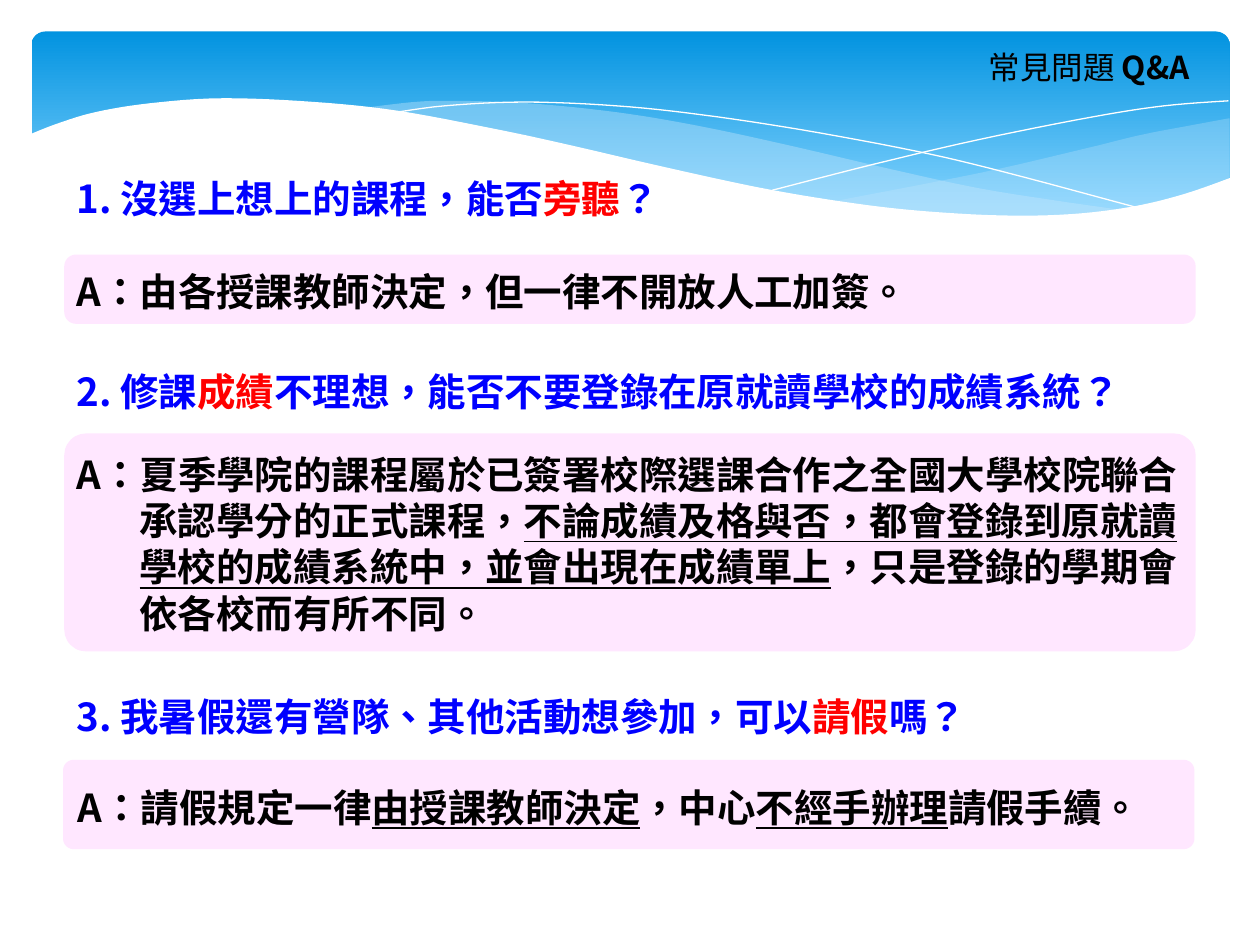
"""Build the course FAQ slide: a wave banner above three questions with answers."""
from dataclasses import dataclass
from typing import NamedTuple

from lxml.etree import SubElement
from pptx import Presentation
from pptx.dml.color import RGBColor
from pptx.enum.shapes import MSO_SHAPE as Preset
from pptx.enum.text import MSO_AUTO_SIZE as AutoSize, PP_ALIGN as Align
from pptx.oxml.ns import qn
from pptx.util import Inches, Pt

COLUMNS, ROWS = 100, 75
CELL = Inches(0.1)


@dataclass(frozen=True)
class Theme:
    font: str = "Noto Sans CJK SC"
    language: str = "zh-TW"
    body: float = 22
    heading: float = 18
    leading: float = 1.2
    ink: str = "000000"
    question: str = "0000FF"
    accent: str = "FF0000"
    panel: str = "FFE7FF"
    paper: str = "FFFFFF"
    sky_top: str = "0293E0"
    sky_bottom: str = "83D3FE"
    mist: str = "C6E7FC"


class Area(NamedTuple):
    column: float
    row: float
    columns: float
    rows: float


class Span(NamedTuple):
    text: str
    color: str
    bold: bool = True
    underline: bool = False


class Wave(NamedTuple):
    edges: list
    fill: str | None = None
    opacity: int = 100


class Entry(NamedTuple):
    question_row: float
    question: list
    panel: Area
    corner: float
    answer: Area
    reply: list


THEME = Theme()


def ask(text: str) -> Span:
    """Return a question span."""
    return Span(text, THEME.question)


def stress(text: str) -> Span:
    """Return a highlighted keyword span."""
    return Span(text, THEME.accent)


def say(text: str, underline: bool = False) -> Span:
    """Return an answer span."""
    return Span(text, THEME.ink, underline=underline)


WAVES = [
    Wave([[(97.5, 9.4), (94.8, 9.9), (90.6, 10.7), (86.1, 11.8), (77.9, 13.7), (66.1, 16)],
          [(66.1, 16), (71.9, 16.7), (76.9, 17.1), (81.4, 17.2), (86.3, 17),
           (89.7, 16.5), (93.5, 15.6), (97.6, 14.1)],
          [(97.6, 14.1), (97.6, 9.4)]], THEME.mist, 29),
    Wave([[(89.3, 16.7), (83.7, 15.9), (77.5, 14.9), (70.6, 13.4), (62.9, 11.6),
           (55.5, 10), (48.9, 8.9), (42, 8.2), (36.1, 8), (32.8, 8.1), (28.6, 8.6)],
          [(28.6, 8.6), (34.2, 9.4), (40.4, 10.6), (44.9, 11.6), (53, 13.5), (60.1, 15),
           (66.5, 16.1), (72.2, 16.8), (77.3, 17.2), (81.8, 17.3), (85.7, 17.1), (89.3, 16.7)]],
         THEME.mist, 40),
    Wave([[(30.9, 9), (35.3, 8.4), (41.6, 8.1), (48.9, 8.4), (55.6, 9.1), (63.6, 10.3),
           (72.7, 12), (79.5, 13.6), (90.7, 16.6)]]),
    Wave([[(61.3, 15.1), (69.5, 13), (77.6, 11.1), (86.6, 9.3), (92.4, 8.4), (97.5, 8)]]),
    Wave([[(2.3, 10.7), (4.6, 9.8), (7.6, 8.9), (11.9, 8.2), (17.7, 7.8), (25, 8.1),
           (31.6, 8.8), (39.1, 10.2), (44.7, 11.4), (52.9, 13.3), (60.3, 14.9), (66.8, 16),
           (72.6, 16.7), (79.3, 17.1), (85, 17), (89.9, 16.4), (94, 15.4), (97.7, 14.1)],
          [(97.7, 22.4), (2.3, 22.4)]], THEME.paper),
]

ENTRIES = [
    Entry(13.2, [ask("1. 沒選上想上的課程，能否"), stress("旁聽"), ask("？")],
          Area(5.1, 20.2, 89.8, 5.5), 0.17, Area(5.1, 20.6, 90.6, 4.7),
          [say("A：由各授課教師決定，但一律不開放人工加簽。")]),
    Entry(28.5, [ask("2. 修課"), stress("成績"),
                 ask("不理想，能否不要登錄在原就讀學校的成績系統？")],
          Area(5.1, 34.4, 89.8, 17.3), 0.1, Area(5.1, 35.1, 90.6, 15.8),
          [say("A：夏季學院的課程屬於已簽署校際選課合作之全國大學校院聯合承認學分的正式課程，"),
           say("不論成績及格與否，都會登錄到原就讀學校的成績系統中，並會出現在成績單上", True),
           say("，只是登錄的學期會依各校而有所不同。")]),
    Entry(54.3, [ask("3. 我暑假還有營隊、其他活動想參加，可以"), stress("請假"), ask("嗎？")],
          Area(5, 60.3, 89.8, 7.1), 0.12, Area(5.2, 61.5, 90.6, 4.7),
          [say("A：請假規定一律"), say("由授課教師決定", True), say("，中心"),
           say("不經手辦理", True), say("請假手續。")]),
]


def cells(*counts: float) -> list[int]:
    """Convert grid counts to slide lengths."""
    return [round(count * CELL) for count in counts]


def smooth(points: list, steps: int = 6) -> list:
    """Return points along a Catmull-Rom curve through the given points."""
    padded = [points[0], *points, points[-1]]
    curve = [points[0]]
    for a, b, c, d in zip(padded, padded[1:], padded[2:], padded[3:]):
        for step in range(1, steps + 1):
            t = step / steps
            curve.append(tuple(
                b[i] + 0.5 * t * (c[i] - a[i]
                                  + t * (2 * a[i] - 5 * b[i] + 4 * c[i] - d[i])
                                  + t * t * (3 * b[i] - a[i] - 3 * c[i] + d[i]))
                for i in range(2)))
    return curve


def draw_wave(shapes, wave: Wave) -> None:
    """Draw a filled wave, or a hairline when it has no fill."""
    points = [cells(*point) for edge in wave.edges for point in smooth(edge)]
    builder = shapes.build_freeform(*points[0])
    builder.add_line_segments(points[1:], close=wave.fill is not None)
    shape = builder.convert_to_shape()
    shape.shadow.inherit = False
    if wave.fill is None:
        shape.fill.background()
        shape.line.color.rgb = RGBColor.from_string(THEME.paper)
        shape.line.width = Pt(0)
        return
    shape.line.fill.background()
    shape.fill.solid()
    shape.fill.fore_color.rgb = RGBColor.from_string(wave.fill)
    if wave.opacity < 100:
        color = shape.fill._xPr.find(".//" + qn("a:srgbClr"))
        SubElement(color, qn("a:alpha")).set("val", str(wave.opacity * 1000))


def draw_panel(shapes, area: Area, corner: float):
    """Draw a rounded panel and return it."""
    panel = shapes.add_shape(Preset.ROUNDED_RECTANGLE, *cells(*area))
    panel.adjustments[0] = corner
    panel.shadow.inherit = False
    panel.line.fill.background()
    panel.fill.solid()
    panel.fill.fore_color.rgb = RGBColor.from_string(THEME.panel)
    return panel


def draw_text(shapes, area: Area, spans: list, size: float, hanging: bool = True) -> None:
    """Write one paragraph of spans, hanging or centred on one line."""
    box = shapes.add_textbox(*cells(*area))
    frame = box.text_frame
    frame.word_wrap = hanging
    frame.auto_size = AutoSize.SHAPE_TO_FIT_TEXT
    frame.margin_top, frame.margin_bottom = Inches(0.07), Inches(0.03)
    para = frame.paragraphs[0]
    para.line_spacing = Pt(size * THEME.leading)
    if hanging:
        properties = para._p.get_or_add_pPr()
        properties.set("marL", str(Inches(0.5)))
        properties.set("indent", str(-Inches(0.5)))
    else:
        para.alignment = Align.CENTER
    for span in spans:
        run = para.add_run()
        run.text = span.text
        font = run.font
        font.name, font.size = THEME.font, Pt(size)
        font.bold, font.underline = span.bold, span.underline
        font.color.rgb = RGBColor.from_string(span.color)
        font._element.set("lang", THEME.language)
        SubElement(font._element, qn("a:ea")).set("typeface", THEME.font)


def draw_banner(page) -> None:
    """Draw the gradient banner and its waves."""
    sky = draw_panel(page.shapes, Area(2.5, 2.5, COLUMNS - 4.9, 15.6), 0.07)
    sky.fill.gradient()
    sky.fill.gradient_angle = 270
    stops = zip(sky.fill.gradient_stops, (0, 0.9), (THEME.sky_top, THEME.sky_bottom))
    for stop, position, color in stops:
        stop.position = position
        stop.color.rgb = RGBColor.from_string(color)
    group = page.shapes.add_group_shape()
    for wave in WAVES:
        draw_wave(group.shapes, wave)


def main() -> None:
    """Build and save the deck."""
    deck = Presentation()
    deck.slide_width, deck.slide_height = cells(COLUMNS, ROWS)
    page = deck.slides.add_slide(deck.slide_layouts[6])
    draw_banner(page)
    heading = [Span("常見問題 ", THEME.ink, bold=False), Span("Q&A", THEME.ink)]
    draw_text(page.shapes, Area(76.8, 3.1, 19.3, 4), heading, THEME.heading, hanging=False)
    for entry in ENTRIES:
        draw_text(page.shapes, Area(5.1, entry.question_row, 90.6, 4.7),
                  entry.question, THEME.body)
        group = page.shapes.add_group_shape()
        draw_panel(group.shapes, entry.panel, entry.corner)
        draw_text(group.shapes, entry.answer, entry.reply, THEME.body)
    deck.save("out.pptx")


if __name__ == "__main__":
    main()
